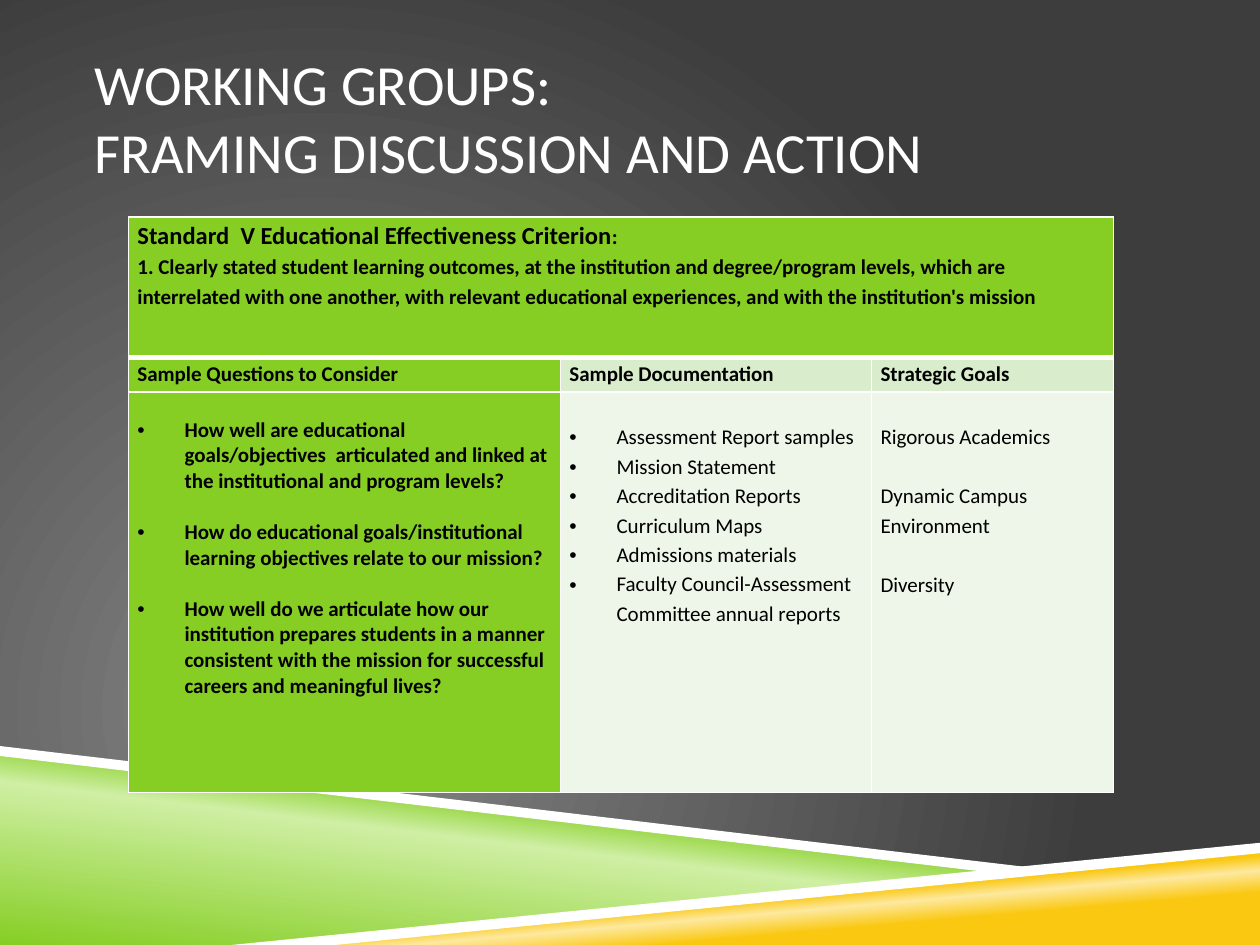
from dataclasses import dataclass
from lxml.etree import SubElement
from pptx import Presentation
from pptx.dml.color import RGBColor
from pptx.enum.text import MSO_ANCHOR, MSO_AUTO_SIZE, PP_ALIGN
from pptx.oxml import parse_xml
from pptx.oxml.ns import nsdecls, qn
from pptx.util import Cm, Pt

# Content
TITLE_LINES = ["WORKING GROUPS:", "FRAMING DISCUSSION AND ACTION"]
CRITERION_HEADING = "Standard  V Educational Effectiveness Criterion"
CRITERION = (
    "1. Clearly stated student learning outcomes, at the institution and degree/program "
    "levels, which are interrelated with one another, with relevant educational "
    "experiences, and with the institution's mission"
)
COLUMNS = [
    {
        "heading": "Sample Questions to Consider",
        "items": [
            "How well are educational goals/objectives  articulated and linked at the "
            "institutional and program levels?",
            "How do educational goals/institutional learning objectives relate to our mission?",
            "How well do we articulate how our institution prepares students in a manner "
            "consistent with the mission for successful careers and meaningful lives?",
        ],
        "width": 8.71, "fills": ("86CE24", "86CE24"), "top": 0.51,
        "bold": True, "bullet": True, "gap": 14.65, "spacing": 1.0,
    },
    {
        "heading": "Sample Documentation",
        "items": [
            "Assessment Report samples",
            "Mission Statement",
            "Accreditation Reports",
            "Curriculum Maps",
            "Admissions materials",
            "Faculty Council-Assessment Committee annual reports",
        ],
        "width": 6.27, "fills": ("D9EDCD", "EDF6E8"), "top": 0.59,
        "bold": False, "bullet": True, "gap": 0, "spacing": 1.15,
    },
    {
        "heading": "Strategic Goals",
        "items": ["Rigorous Academics", "Dynamic Campus Environment", "Diversity"],
        "width": 4.88, "fills": ("D9EDCD", "EDF6E8"), "top": 0.59,
        "bold": False, "bullet": False, "gap": 16.85, "spacing": 1.15,
    },
]
ROW_HEIGHTS = [2.84, 0.69, 8.08]


@dataclass(frozen=True)
class Theme:
    font: str = "Calibri"
    title_size: float = 32.4
    heading_size: float = 14
    text_size: float = 12
    white: str = "FFFFFF"
    black: str = "000000"
    green: str = "86CE24"
    backdrop: tuple = ((0, "878787"), (100, "3D3D3D"))
    green_band: tuple = ((0, "86CE24"), (52, "CFEFA4"), (66, "86CE24"))
    yellow_band: tuple = ((28, "FAC810"), (40, "FDE99F"), (48, "FAC810"))


THEME = Theme()

# Decorative bands: corner points in cm, colour stops or plain colour, angle
BANDS = [
    ([(0, 15.16), (20.12, 17.58), (5.08, 19.05), (0, 19.05)], THEME.green_band, 277),
    ([(5.03, 19.05), (25.4, 17.07), (25.4, 19.05)], THEME.yellow_band, 265),
    ([(0, 15.04), (0, 15.24), (20.07, 17.6), (21.13, 17.53)], THEME.white, None),
    ([(25.4, 16.99), (4.67, 19.05), (6.76, 19.05), (25.4, 17.2)], THEME.white, None),
]


def set_solid(fill, color):
    fill.solid()
    fill.fore_color.rgb = RGBColor.from_string(color)


def set_gradient(fill, owner, stops, direction):
    """Swap the solid fill below owner for a gradient of several stops."""
    fill.solid()
    solid = next(owner.iter(qn("a:solidFill")))
    stop_xml = "".join(
        f'<a:gs pos="{position * 1000}"><a:srgbClr val="{color}"/></a:gs>'
        for position, color in stops
    )
    gradient = parse_xml(
        f'<a:gradFill {nsdecls("a")} rotWithShape="1">'
        f"<a:gsLst>{stop_xml}</a:gsLst>{direction}</a:gradFill>"
    )
    solid.getparent().replace(solid, gradient)


def style_run(run, size, color, bold=False):
    run.font.name = THEME.font
    run.font.size = Pt(size)
    run.font.bold = bold
    run.font.color.rgb = RGBColor.from_string(color)


def add_bands(slide):
    for corners, paint, angle in BANDS:
        start, *others = [(Cm(x), Cm(y)) for x, y in corners]
        builder = slide.shapes.build_freeform(*start)
        builder.add_line_segments(others, close=True)
        band = builder.convert_to_shape()
        band.shadow.inherit = False
        band.line.fill.background()
        if angle is None:
            set_solid(band.fill, paint)
        else:
            direction = f'<a:lin ang="{angle * 60000}" scaled="0"/>'
            set_gradient(band.fill, band.element.spPr, paint, direction)


def format_cell(cell, color, top=0.0, upper=1, lower=1):
    cell.margin_left = cell.margin_right = Cm(0.18)
    cell.margin_top, cell.margin_bottom = Cm(top), Cm(0)
    cell.vertical_anchor = MSO_ANCHOR.TOP
    set_solid(cell.fill, color)
    properties = cell._tc.get_or_add_tcPr()
    edges = [("lnL", 1), ("lnR", 1), ("lnT", upper), ("lnB", lower)]
    for place, (edge, width) in enumerate(edges):
        properties.insert(place, parse_xml(
            f'<a:{edge} {nsdecls("a")} w="{Pt(width)}"><a:solidFill>'
            f'<a:srgbClr val="{THEME.white}"/></a:solidFill></a:{edge}>'
        ))


def write_items(cell, items, bold, bullet=False, gap=0, spacing=1.15):
    cell.text_frame.text = "\n".join(items)
    for number, paragraph in enumerate(cell.text_frame.paragraphs):
        if bullet:
            properties = paragraph._p.get_or_add_pPr()
            properties.set("marL", str(Cm(0.95)))
            properties.set("indent", str(-Cm(0.95)))
            SubElement(properties, qn("a:buFont"), typeface="Arial")
            SubElement(properties, qn("a:buChar"), char="•")
        paragraph.line_spacing = spacing
        paragraph.space_before = Pt(gap if number else 0)
        for run in paragraph.runs:
            style_run(run, THEME.text_size, THEME.black, bold)


def add_criterion_table(slide):
    table = slide.shapes.add_table(
        len(ROW_HEIGHTS), len(COLUMNS), Cm(2.59), Cm(4.37),
        Cm(sum(column["width"] for column in COLUMNS)), Cm(sum(ROW_HEIGHTS)),
    ).table
    table.first_row = table.horz_banding = False
    for row, height in zip(table.rows, ROW_HEIGHTS):
        row.height = Cm(height)

    # Heading and body cells
    for index, column in enumerate(COLUMNS):
        table.columns[index].width = Cm(column["width"])
        banner, heading, body = (table.cell(row, index) for row in range(3))
        heading_fill, body_fill = column["fills"]
        format_cell(banner, THEME.green, lower=3)
        format_cell(heading, heading_fill, upper=3)
        format_cell(body, body_fill, top=column["top"])
        write_items(heading, [column["heading"]], bold=True)
        write_items(body, column["items"], column["bold"], column["bullet"],
                    column["gap"], column["spacing"])

    # Criterion across the full width
    criterion = table.cell(0, 0)
    criterion.merge(table.cell(0, len(COLUMNS) - 1))
    write_items(criterion, [CRITERION_HEADING, CRITERION], bold=True)
    first_line = criterion.text_frame.paragraphs[0]
    first_line.runs[0].font.size = Pt(THEME.heading_size)
    colon = first_line.add_run()
    colon.text = ":"
    style_run(colon, THEME.text_size, THEME.black, bold=True)


def main():
    deck = Presentation()
    deck.slide_width, deck.slide_height = Cm(25.4), Cm(19.05)
    slide = deck.slides.add_slide(deck.slide_layouts[5])

    # Backdrop
    circle = ('<a:path path="circle"><a:fillToRect l="50000" t="100000" '
              'r="100000" b="50000"/></a:path>')
    set_gradient(slide.background.fill, slide.element, THEME.backdrop, circle)
    add_bands(slide)

    # Title
    title = slide.shapes.title
    title.left, title.top, title.width, title.height = Cm(1.9), Cm(0.76), Cm(22.58), Cm(3.18)
    frame = title.text_frame
    frame.text = "\v".join(TITLE_LINES)
    frame.word_wrap = True
    frame.auto_size = MSO_AUTO_SIZE.NONE
    frame.vertical_anchor = MSO_ANCHOR.MIDDLE
    frame.margin_left = frame.margin_right = Cm(0)
    for paragraph in frame.paragraphs:
        paragraph.alignment = PP_ALIGN.LEFT
        for run in paragraph.runs:
            style_run(run, THEME.title_size, THEME.white)

    add_criterion_table(slide)
    deck.save("out.pptx")


if __name__ == "__main__":
    main()
